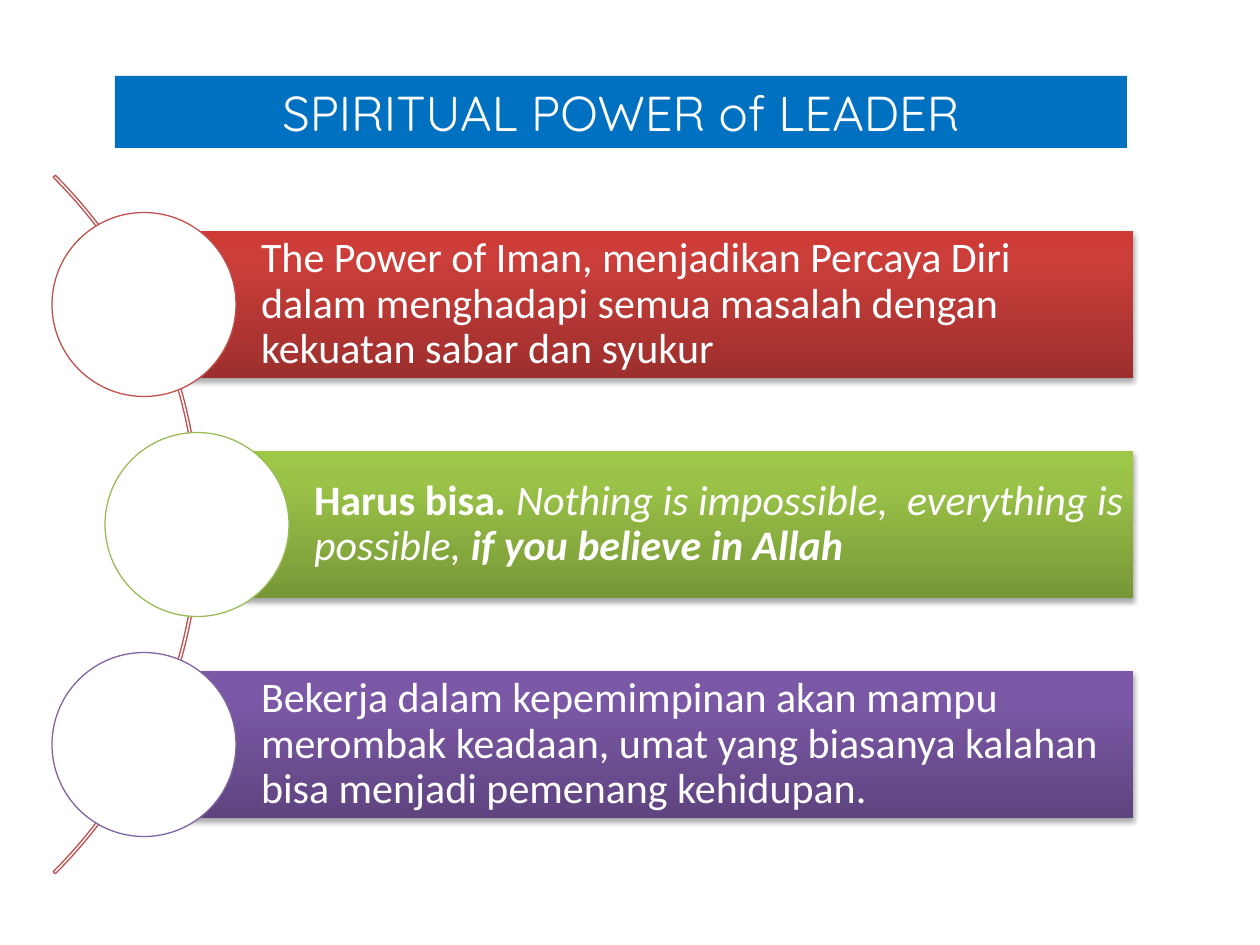
"""Build the slide on the spiritual power of a leader."""
from lxml.etree import SubElement
from pptx import Presentation
from pptx.dml.color import RGBColor
from pptx.enum.shapes import MSO_SHAPE as SHAPE
from pptx.enum.text import MSO_ANCHOR as ANCHOR, PP_ALIGN as ALIGN
from pptx.oxml.ns import qn
from pptx.util import Emu, Pt

TITLE = "SPIRITUAL POWER of LEADER"
ITEMS = [
    ("red", 144, [("The Power of Iman, menjadikan Percaya Diri dalam menghadapi "
                   "semua masalah dengan kekuatan sabar dan syukur", "")]),
    ("green", 197, [("Harus bisa", "b"), (". ", "bi"),
                    ("Nothing is impossible,  everything is possible, ", "i"),
                    ("if you believe in Allah", "bi")]),
    ("purple", 144, [("Bekerja dalam kepemimpinan akan mampu merombak keadaan, umat "
                      "yang biasanya kalahan bisa menjadi pemenang kehidupan.", "")]),
]
COLORS = {"white": "FFFFFF", "black": "000000", "title": "0070C0",
          "red": "C0504D", "green": "9BBB59", "purple": "8064A2"}
GRADIENTS = {"red": ("9C2F2D", "CB3E3A", "CE3B37"),
             "green": ("779737", "9BC348", "9DC746"),
             "purple": ("5F4480", "7B58A6", "7C57A8")}
STOPS = (0, 80000, 100000)
BAR_TOP, BAR_H, PITCH, RIGHT = 231, 147, 220, 1133
CIRCLE, ARC, ARC_X = 184, 988, -788
INSET, TEXT_GAP = 9, 117


def px(n):
    return Emu(round(n * 914400 / 126))


def rgb(name):
    return RGBColor.from_string(COLORS[name])


def add_shape(s, kind, x, y, w, h, fill=None, line=None):
    sp = s.shapes.add_shape(kind, px(x), px(y), px(w), px(h))
    if fill:
        sp.fill.solid()
        sp.fill.fore_color.rgb = rgb(fill)
    else:
        sp.fill.background()
    if line:
        sp.line.color.rgb = rgb(line)
        sp.line.width = Pt(0.75)
    else:
        sp.line.fill.background()
    sp.shadow.inherit = False
    return sp


def add_run(p, text, size, font, style=""):
    r = p.add_run()
    r.text = text
    r.font.size, r.font.name = Pt(size), font
    r.font.color.rgb = rgb("white")
    r.font.bold, r.font.italic = "b" in style, "i" in style


def shade(sp, colors):
    sp.fill.gradient()
    sp.fill.gradient_angle = 90
    stops = sp._element.spPr.find(".//" + qn("a:gsLst"))
    stops.clear()
    for pos, color in zip(STOPS, colors):
        gs = SubElement(stops, qn("a:gs"), pos=str(pos))
        SubElement(gs, qn("a:srgbClr"), val=color)


def cast_shadow(sp):
    effects = sp._element.spPr.find(qn("a:effectLst"))
    shadow = SubElement(effects, qn("a:outerShdw"), blurRad="40000", dist="23000",
                        dir="5400000", rotWithShape="0")
    color = SubElement(shadow, qn("a:srgbClr"), val=COLORS["black"])
    SubElement(color, qn("a:alpha"), val="35000")


def add_item(s, i, color, x, runs):
    y = BAR_TOP + i * PITCH
    bar = add_shape(s, SHAPE.RECTANGLE, x, y, RIGHT - x, BAR_H)
    shade(bar, GRADIENTS[color])
    cast_shadow(bar)
    tf = bar.text_frame
    tf.word_wrap, tf.vertical_anchor = True, ANCHOR.MIDDLE
    tf.margin_left = px(TEXT_GAP)
    tf.margin_top = tf.margin_right = tf.margin_bottom = px(INSET)
    p = tf.paragraphs[0]
    p.alignment, p.line_spacing = ALIGN.LEFT, 0.9
    for text, style in runs:
        add_run(p, text, 24, "Calibri", style)
    add_shape(s, SHAPE.OVAL, x - CIRCLE / 2, y + (BAR_H - CIRCLE) / 2,
              CIRCLE, CIRCLE, "white", color)


def main():
    prs = Presentation()
    prs.slide_width, prs.slide_height = px(1260), px(945)
    s = prs.slides.add_slide(prs.slide_layouts[6])

    arc_y = BAR_TOP + PITCH + (BAR_H - ARC) / 2
    arc = add_shape(s, SHAPE.BLOCK_ARC, ARC_X, arc_y, ARC, ARC, line="red")
    for i, value in enumerate((189, 27, 0.003)):
        arc.adjustments[i] = value

    for i, item in enumerate(ITEMS):
        add_item(s, i, *item)

    title = add_shape(s, SHAPE.RECTANGLE, 115, 76, 1012, 72, "title")
    tf = title.text_frame
    tf.word_wrap, tf.vertical_anchor = True, ANCHOR.TOP
    p = tf.paragraphs[0]
    p.alignment = ALIGN.CENTER
    add_run(p, TITLE, 28, "Quicksand")
    prs.save("out.pptx")


if __name__ == "__main__":
    main()
